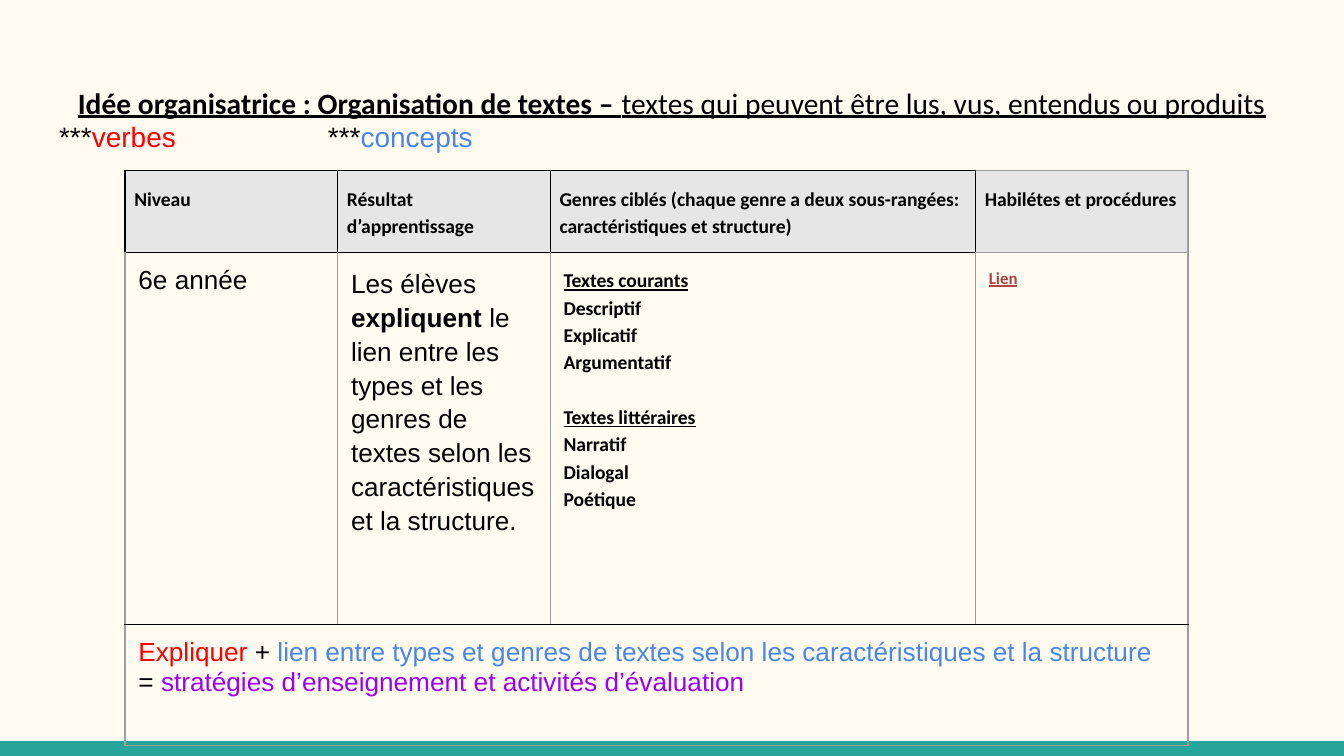
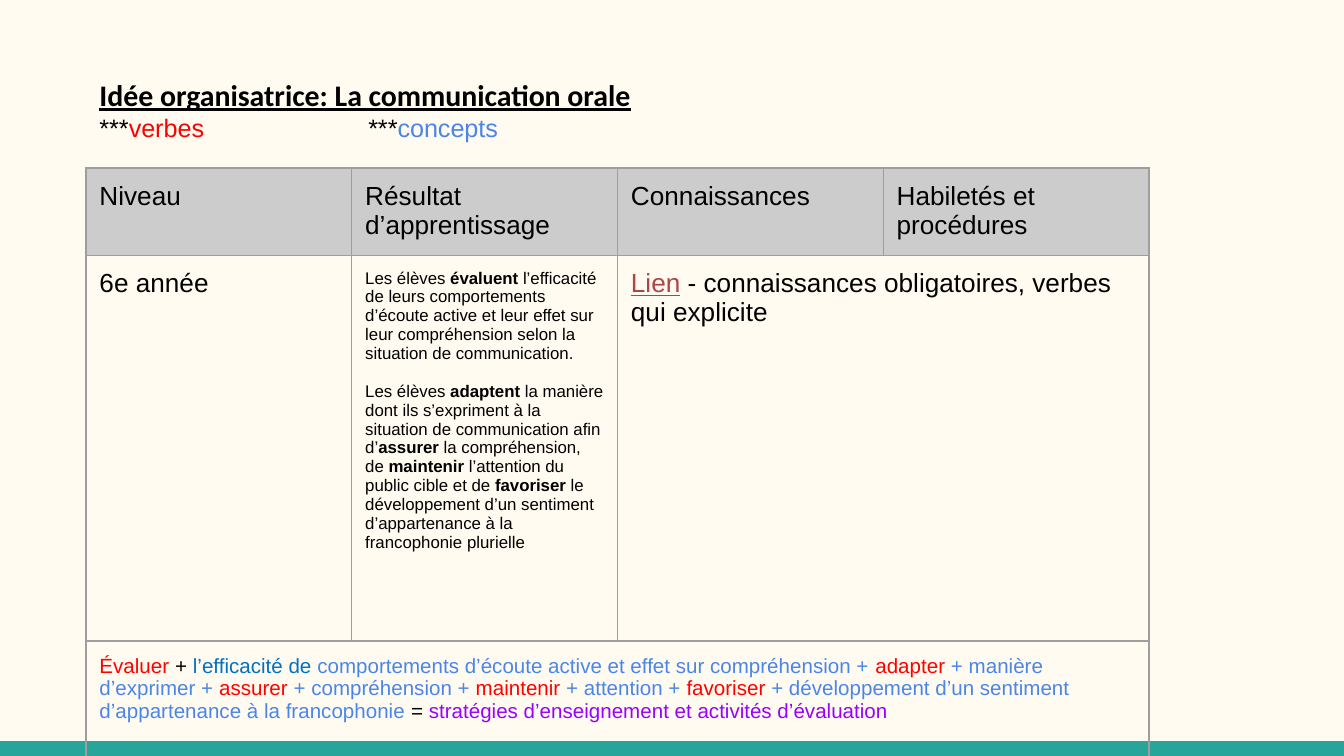
from dataclasses import dataclass

import pptx
import pptx.dml.color
import pptx.enum.shapes
import pptx.enum.text
import pptx.oxml
import pptx.oxml.ns
import pptx.util

# Shared look
W = 10
H = W * 9 / 16
TABLE_W = 7.91
CREAM, TEAL = "FFFBF0", "26A69A"
BLACK, GREY = "000000", "9E9E9E"
RED, BLUE, PURPLE, LINK = "FF0000", "4A86E8", "9900FF", "AF4345"
LEFT = pptx.enum.text.PP_ALIGN.LEFT
CENTER = pptx.enum.text.PP_ALIGN.CENTER
GOAL = ("stratégies d’enseignement et activités d’évaluation", PURPLE)


@dataclass
class Para:
    """Runs are (text, colour, style); style holds b for bold, u for underline."""
    runs: list
    size: float = 14
    font: str = "Arial"
    spacing: float = 1.0
    align: object = LEFT
    before: float = 0


def inches(*values):
    return [pptx.util.Inches(v) for v in values]


def rgb(hex_code):
    return pptx.dml.color.RGBColor.from_string(hex_code)


def write(tf, paras):
    tf.word_wrap = True
    for i, para in enumerate(paras):
        p = tf.add_paragraph() if i else tf.paragraphs[0]
        p.alignment, p.line_spacing = para.align, para.spacing
        p.space_before = pptx.util.Pt(para.before)
        for text, colour, *style in para.runs:
            flags = style[0] if style else ""
            r = p.add_run()
            r.text = text
            r.font.name, r.font.size = para.font, pptx.util.Pt(para.size)
            r.font.bold, r.font.underline = "b" in flags, "u" in flags
            r.font.color.rgb = rgb(colour)


def set_margins(box, inset_x=0.1):
    box.margin_left = box.margin_right = pptx.util.Inches(inset_x)
    box.margin_top = box.margin_bottom = pptx.util.Inches(0.1)


# Background and bottom band
def dress_master(prs, s):
    master = prs.slide_master
    master.background.fill.solid()
    master.background.fill.fore_color.rgb = rgb(CREAM)
    band = s.shapes.add_shape(pptx.enum.shapes.MSO_SHAPE.RECTANGLE,
                              *inches(0, H - 0.11, W, 0.11))
    band.shadow.inherit = False
    band.fill.solid()
    band.fill.fore_color.rgb = rgb(TEAL)
    band.line.fill.background()
    band.element.nvSpPr.cNvPr.id = 99
    master.shapes.element.append(band.element)


# Title with its colour key, tabs one inch apart
def add_title(s, at, heading, key_size):
    sp = s.shapes.title
    sp.left, sp.top, sp.width, sp.height = inches(*at)
    tf = sp.text_frame
    tf.auto_size = pptx.enum.text.MSO_AUTO_SIZE.NONE
    tf.vertical_anchor = pptx.enum.text.MSO_ANCHOR.TOP
    set_margins(tf)
    key = Para([("***", BLACK), ("verbes", RED),
                ("\t\t***", BLACK), ("concepts", BLUE)], key_size)
    write(tf, [heading, key])
    p_pr = tf.paragraphs[1]._p.get_or_add_pPr()
    p_pr.set("defTabSz", str(pptx.util.Inches(1)))


def set_borders(cell, left, right, top, bottom):
    tc_pr = cell._tc.get_or_add_tcPr()
    sides = zip(("lnL", "lnR", "lnT", "lnB"), (left, right, top, bottom))
    for i, (tag, colour) in enumerate(sides):
        tc_pr.insert(i, pptx.oxml.parse_xml(
            f'<a:{tag} {pptx.oxml.ns.nsdecls("a")} w="9525"><a:solidFill>'
            f'<a:srgbClr val="{colour}"/></a:solidFill></a:{tag}>'))


# Table: column shares, row heights, merged spans as (row, first, last)
def add_table(s, left, top, shares, heights, header_fill, spans, border_rule):
    frame = s.shapes.add_table(len(heights), len(shares),
                               *inches(left, top, TABLE_W, sum(heights)))
    table = frame.table
    table.first_row = table.horz_banding = False
    for column, share in zip(table.columns, shares):
        column.width = pptx.util.Inches(TABLE_W * share / sum(shares))
    for row, height in zip(table.rows, heights):
        row.height = pptx.util.Inches(height)
    for i in range(len(heights)):
        for j in range(len(shares)):
            cell = table.cell(i, j)
            if i == 0:
                cell.fill.solid()
                cell.fill.fore_color.rgb = rgb(header_fill)
            else:
                cell.fill.background()
            set_borders(cell, *border_rule(i, j))
    for row, first, last in spans:
        table.cell(row, first).merge(table.cell(row, last))
    return table


def fill_cell(table, row, col, paras, inset_x=0.1):
    cell = table.cell(row, col)
    write(cell.text_frame, paras)
    set_margins(cell, inset_x)


def mixed_borders(row, col):
    """Black rules around the header and between rows, grey elsewhere."""
    if row == 0:
        return (BLACK,) * 4 if col < 3 else (BLACK, GREY, GREY, GREY)
    top = GREY if (row, col) == (1, 3) else BLACK
    return GREY, GREY, top, BLACK if row == 1 else GREY


def grey_borders(row, col):
    return (GREY,) * 4


def small_bold(text, style="b", before=0):
    return Para([(text, BLACK, style)], 10.5, "Calibri", 1.15, before=before)


def build_text_organisation(s):
    heading = Para([("Idée organisatrice : Organisation de textes – ", BLACK, "bu"),
                    ("textes qui peuvent être lus, vus, entendus ou produits",
                     BLACK, "u")], 15.8, "Calibri", 1.15, CENTER)
    add_title(s, (0.34, 0.49, 9.32, 0.67), heading, 15)
    table = add_table(s, 0.93, 1.27, (1, 1, 2, 1), (0.52, 2.77, 0.9),
                      "E7E6E6", [(2, 0, 3)], mixed_borders)
    headers = ("Niveau", "Résultat d’apprentissage",
               "Genres ciblés (chaque genre a deux sous-rangées: "
               "caractéristiques et structure)", "Habilétes et procédures")
    for j, text in enumerate(headers):
        fill_cell(table, 0, j, [small_bold(text)], 0.07)

    fill_cell(table, 1, 0, [Para([("6e année", BLACK)])])
    fill_cell(table, 1, 1, [Para([
        ("Les élèves ", BLACK), ("expliquent", BLACK, "b"),
        (" le lien entre les types et les genres de textes selon les "
         "caractéristiques et la structure.", BLACK)], spacing=1.15)])
    genres = {"Textes courants": ("Descriptif", "Explicatif", "Argumentatif"),
              "Textes littéraires": ("Narratif", "Dialogal", "Poétique")}
    paras = []
    for family, names in genres.items():
        paras.append(small_bold(family, "bu", 14.7 if paras else 0))
        paras += [small_bold(name) for name in names]
    fill_cell(table, 1, 2, paras)
    fill_cell(table, 1, 3, [Para([("Lien", LINK, "bu")], 9, "Calibri", 1.15)])
    fill_cell(table, 2, 0, [Para([
        ("Expliquer ", RED), ("+", BLACK),
        (" lien entre types et genres de textes selon les caractéristiques "
         "et la structure ", BLUE), ("= ", BLACK), GOAL])])


def build_oral_communication(s):
    heading = Para([("Idée organisatrice: La communication orale", BLACK, "bu")],
                   16, "Calibri")
    add_title(s, (0.64, 0.47, 9.07, 0.67), heading, 13.5)
    table = add_table(s, 0.64, 1.25, (1, 1, 1, 1), (0.65, 2.87, 1.03),
                      "CCCCCC", [(1, 2, 3), (2, 0, 3)], grey_borders)
    headers = ("Niveau", "Résultat d’apprentissage", "Connaissances",
               "Habiletés et procédures")
    for j, text in enumerate(headers):
        fill_cell(table, 0, j, [Para([(text, BLACK)])])

    fill_cell(table, 1, 0, [Para([("6e année", BLACK)])])
    fill_cell(table, 1, 1, [
        Para([("Les élèves ", BLACK), ("évaluent", BLACK, "b"),
              (" l’efficacité de leurs comportements d’écoute active et leur "
               "effet sur leur compréhension selon la situation de "
               "communication.", BLACK)], 9),
        Para([("Les élèves ", BLACK), ("adaptent", BLACK, "b"),
              (" la manière dont ils s’expriment à la situation de "
               "communication afin d’", BLACK), ("assurer", BLACK, "b"),
              (" la compréhension, de ", BLACK), ("maintenir", BLACK, "b"),
              (" l’attention du public cible et de ", BLACK),
              ("favoriser", BLACK, "b"),
              (" le développement d’un sentiment d’appartenance à la "
               "francophonie plurielle", BLACK)], 9, before=10.3)])
    fill_cell(table, 1, 2, [Para([
        ("Lien", LINK, "u"),
        (" - connaissances obligatoires, verbes qui explicite", BLACK)])])
    fill_cell(table, 2, 0, [Para([
        ("Évaluer", RED), (" + ", BLACK), ("l’efficacité de ", "0070C0"),
        ("comportements d’écoute active et effet sur compréhension +", BLUE),
        (" adapter", RED), (" + manière d’exprimer + ", BLUE),
        ("assurer ", RED), ("+ compréhension + ", BLUE),
        ("maintenir", RED), (" + attention + ", BLUE), ("favoriser ", RED),
        ("+ développement d’un sentiment d’appartenance à la francophonie ", BLUE),
        ("= ", BLACK), GOAL], 11)])


def main():
    prs = pptx.Presentation()
    prs.slide_width, prs.slide_height = inches(W, H)
    title_only = prs.slide_layouts[5]
    for i, build in enumerate((build_text_organisation, build_oral_communication)):
        s = prs.slides.add_slide(title_only)
        if i == 0:
            dress_master(prs, s)
        build(s)
    prs.save("out.pptx")


if __name__ == "__main__":
    main()
